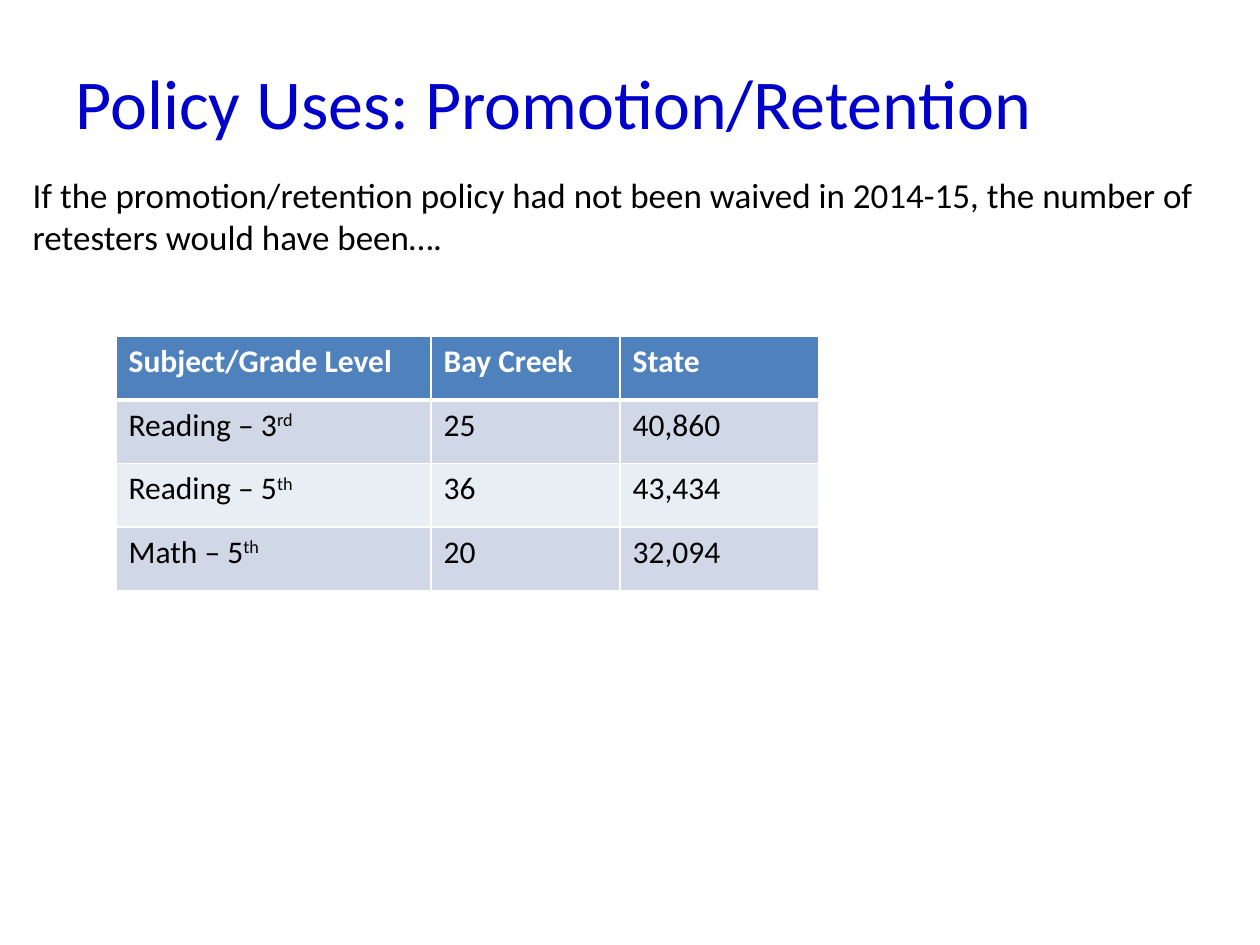
from lxml.etree import SubElement
from pptx import Presentation
from pptx.dml.color import RGBColor
from pptx.enum.text import MSO_ANCHOR, PP_ALIGN
from pptx.oxml.ns import qn
from pptx.util import Cm, Pt

COLORS = {"title": "0000CC", "text": "000000", "white": "FFFFFF",
          "head": "4F81BD", "dark": "D0D8E8", "light": "E9EDF4"}


def add_run(para, text, size, color, bold=False, raised=False):
    run = para.add_run()
    run.text = text
    font = run.font
    font.name, font.size, font.bold = "Calibri", Pt(size), bold
    font.color.rgb = RGBColor.from_string(COLORS[color])
    if raised:
        run._r.get_or_add_rPr().set("baseline", "30000")


def add_edge(cell, side, width):
    line = SubElement(cell._tc.get_or_add_tcPr(), qn("a:" + side), w=str(Pt(width)))
    fill = SubElement(line, qn("a:solidFill"))
    SubElement(fill, qn("a:srgbClr"), val=COLORS["white"])


deck = Presentation()
deck.slide_width, deck.slide_height = Cm(25.4), Cm(19.05)
slide = deck.slides.add_slide(deck.slide_layouts[6])

# Title
title = slide.shapes.add_textbox(Cm(0.3), Cm(0.2), Cm(21.72), Cm(3.68)).text_frame
title.word_wrap = True
title.vertical_anchor = MSO_ANCHOR.MIDDLE
title.paragraphs[0].alignment = PP_ALIGN.CENTER
add_run(title.paragraphs[0], "Policy Uses: Promotion/Retention", 40, "title")

# Lead-in sentence
lead = slide.shapes.add_textbox(Cm(0.41), Cm(3.38), Cm(24.46), Cm(1.96)).text_frame
lead.word_wrap = True
add_run(lead.paragraphs[0], "If the promotion/retention policy had not been waived in 2014-15, "
        "the number of retesters would have been….", 20, "text")

# Retester table: each cell holds its text and an optional raised ending
rows = [
    [("Subject/Grade Level", ""), ("Bay Creek", ""), ("State", "")],
    [("Reading – 3", "rd"), ("25", ""), ("40,860", "")],
    [("Reading – 5", "th"), ("36", ""), ("43,434", "")],
    [("Math – 5", "th"), ("20", ""), ("32,094", "")],
]
widths = [6.35, 3.81, 4.01]
height = 1.28
table = slide.shapes.add_table(len(rows), len(widths), Cm(2.34), Cm(6.78),
                               Cm(sum(widths)), Cm(height * len(rows))).table
for col, width in zip(table.columns, widths):
    col.width = Cm(width)

for i, row in enumerate(rows):
    table.rows[i].height = Cm(height)
    head = i == 0
    shade = "head" if head else "dark" if i % 2 else "light"
    for j, (text, ending) in enumerate(row):
        cell = table.cell(i, j)
        para = cell.text_frame.paragraphs[0]
        color = "white" if head else "text"
        add_run(para, text, 18, color, bold=head)
        if ending:
            add_run(para, ending, 18, color, raised=True)
        # Borders go before the fill; the rule under the header is thick
        add_edge(cell, "lnL", 1)
        add_edge(cell, "lnR", 1)
        add_edge(cell, "lnT", 3 if i == 1 else 1)
        add_edge(cell, "lnB", 3 if head else 1)
        cell.fill.solid()
        cell.fill.fore_color.rgb = RGBColor.from_string(COLORS[shade])

deck.save("out.pptx")
